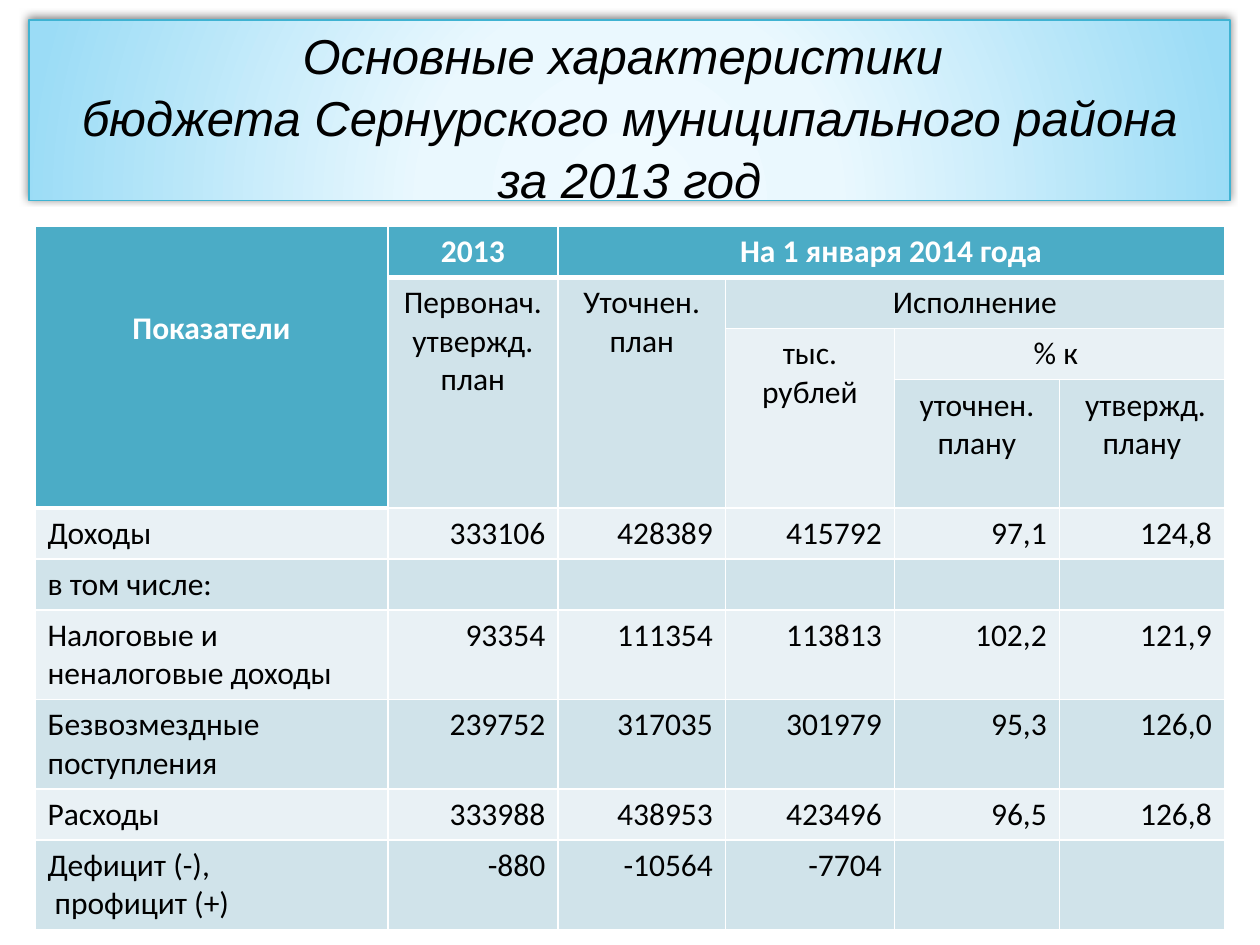
from dataclasses import dataclass

from lxml import etree
from pptx import Presentation
from pptx.dml.color import RGBColor
from pptx.enum import text
from pptx.oxml import parse_xml
from pptx.oxml.ns import nsdecls, qn
from pptx.util import Pt

LEFT, CENTER, RIGHT = text.PP_ALIGN.LEFT, text.PP_ALIGN.CENTER, text.PP_ALIGN.RIGHT


@dataclass(frozen=True)
class Theme:
    header: str = "4BACC6"
    bands: tuple = ("E9F1F5", "D0E3EA")
    white: str = "FFFFFF"
    black: str = "000000"
    title_line: str = "3FB3D2"
    title_stops: tuple = ((0, "EFFAFF"), (34, "EAF8FE"), (100, "9BDCF6"))
    title_font: str = "Arial"
    body_font: str = "Calibri"
    title_size: int = 28
    body_size: int = 18
    rule: int = 1
    header_rule: int = 3


class Deck:
    """Holds the theme and the current slide."""

    def __init__(self, theme):
        self.theme = theme
        self.prs = Presentation()
        self.prs.slide_width, self.prs.slide_height = Pt(720), Pt(540)
        self.s = self.prs.slides.add_slide(self.prs.slide_layouts[5])

    def add_lines(self, tf, lines, align, color, spacing=None, **font):
        for i, line in enumerate(lines):
            p = tf.paragraphs[0] if i == 0 else tf.add_paragraph()
            p.alignment = align
            if spacing:
                p.line_spacing = spacing
            r = p.add_run()
            r.text = line
            for name, value in font.items():
                setattr(r.font, name, value)
            r.font.color.rgb = RGBColor.from_string(color)

    def title(self, lines, left, top, width, height):
        t, sp = self.theme, self.s.shapes.title
        box = dict(left=left, top=top, width=width, height=height)
        for name, value in box.items():
            setattr(sp, name, Pt(value))
        sp.line.color.rgb = RGBColor.from_string(t.title_line)
        sp.line.width = Pt(0.75)
        stops = "".join(f'<a:gs pos="{pos * 1000}"><a:srgbClr val="{color}"/></a:gs>'
                        for pos, color in t.title_stops)
        line = sp.line._ln
        line.addprevious(parse_xml(
            f'<a:gradFill {nsdecls("a")} rotWithShape="1"><a:gsLst>{stops}</a:gsLst>'
            '<a:path path="circle"><a:fillToRect l="50000" t="155000" r="50000" b="-55000"/>'
            '</a:path></a:gradFill>'))
        line.addnext(parse_xml(
            f'<a:effectLst {nsdecls("a")}><a:outerShdw blurRad="{Pt(5)}" dist="{Pt(2)}" '
            f'dir="14700000" rotWithShape="0"><a:srgbClr val="{t.black}">'
            '<a:alpha val="50000"/></a:srgbClr></a:outerShdw></a:effectLst>'))
        tf = sp.text_frame
        frame = dict(word_wrap=False, auto_size=text.MSO_AUTO_SIZE.NONE,
                     vertical_anchor=text.MSO_ANCHOR.MIDDLE,
                     margin_top=Pt(6), margin_bottom=0)
        for name, value in frame.items():
            setattr(tf, name, value)
        self.add_lines(tf, lines, CENTER, t.black, spacing=1.05, name=t.title_font,
                       size=Pt(t.title_size), italic=True)

    def borders(self, cell, top, bottom):
        tc_pr = cell._tc.get_or_add_tcPr()
        rule = self.theme.rule
        for side, width in zip("LRTB", (rule, rule, top, bottom)):
            ln = etree.SubElement(tc_pr, qn(f"a:ln{side}"), w=str(Pt(width)))
            fill = etree.SubElement(ln, qn("a:solidFill"))
            etree.SubElement(fill, qn("a:srgbClr"), val=self.theme.white)

    def table(self, left, top, widths, heights, content, merges, header_rows):
        """Draw the table; header_rows counts the rows above the data."""
        t = self.theme
        tb = self.s.shapes.add_table(len(heights), len(widths), Pt(left), Pt(top),
                                     Pt(sum(widths)), Pt(sum(heights))).table
        tb.first_row = tb.horz_banding = False
        for col, width in zip(tb.columns, widths):
            col.width = Pt(width)
        for row, height in zip(tb.rows, heights):
            row.height = Pt(height)
        for r1, c1, r2, c2 in merges:
            tb.cell(r1, c1).merge(tb.cell(r2, c2))

        for i in range(len(heights)):
            for j in range(len(widths)):
                cell = tb.cell(i, j)
                in_header = i == 0 or (j == 0 and i < header_rows)
                after_header = i == (header_rows if j == 0 else 1)
                self.borders(cell, t.header_rule if after_header else t.rule,
                             t.header_rule if in_header else t.rule)
                cell.fill.solid()
                cell.fill.fore_color.rgb = RGBColor.from_string(
                    t.header if in_header else t.bands[i % 2])
                value = content[i][j]
                if not value:
                    continue
                align = CENTER if i < header_rows else RIGHT if j else LEFT
                self.add_lines(cell.text_frame, value.split("\n"), align,
                               t.white if in_header else t.black, name=t.body_font,
                               size=Pt(t.body_size), bold=in_header)
        return tb


TITLE = ["Основные характеристики ", "бюджета Сернурского муниципального района",
         "за 2013 год"]
CONTENT = [
    ["Показатели", "2013", "На 1 января 2014 года", "", "", ""],
    ["", "Первонач. утвержд. план", "Уточнен.\nплан", "Исполнение", "", ""],
    ["", "", "", "тыс. рублей", "% к ", ""],
    ["", "", "", "", "уточнен. плану", " утвержд. плану"],
    ["Доходы", "333106", "428389", "415792", "97,1", "124,8"],
    ["в том числе:", "", "", "", "", ""],
    ["Налоговые и неналоговые доходы", "93354", "111354", "113813", "102,2", "121,9"],
    ["Безвозмездные поступления", "239752", "317035", "301979", "95,3", "126,0"],
    ["Расходы", "333988", "438953", "423496", "96,5", "126,8"],
    ["Дефицит (-),\n профицит (+)", "-880", "-10564", "-7704", "", ""],
]
MERGES = [(0, 0, 3, 0), (0, 2, 0, 5), (1, 1, 3, 1), (1, 2, 3, 2),
          (1, 3, 1, 5), (2, 3, 3, 3), (2, 4, 2, 5)]
ONE_LINE, TWO_LINES = 29.2, 51
HEIGHTS = [ONE_LINE] * 3 + [73] + [ONE_LINE] * 2 + [TWO_LINES] * 2 + [ONE_LINE, TWO_LINES]
WIDTHS = [201.6, 97.2, 95.8, 96.5, 94.3, 94.3]


def main():
    deck = Deck(Theme())
    deck.title(TITLE, 16.6, 11.5, 686.2, 103)
    tb = deck.table(20, 129.4, WIDTHS, HEIGHTS, CONTENT, MERGES, header_rows=4)
    tb.cell(0, 0).margin_top = Pt(47.6)
    deck.prs.save("out.pptx")


if __name__ == "__main__":
    main()
